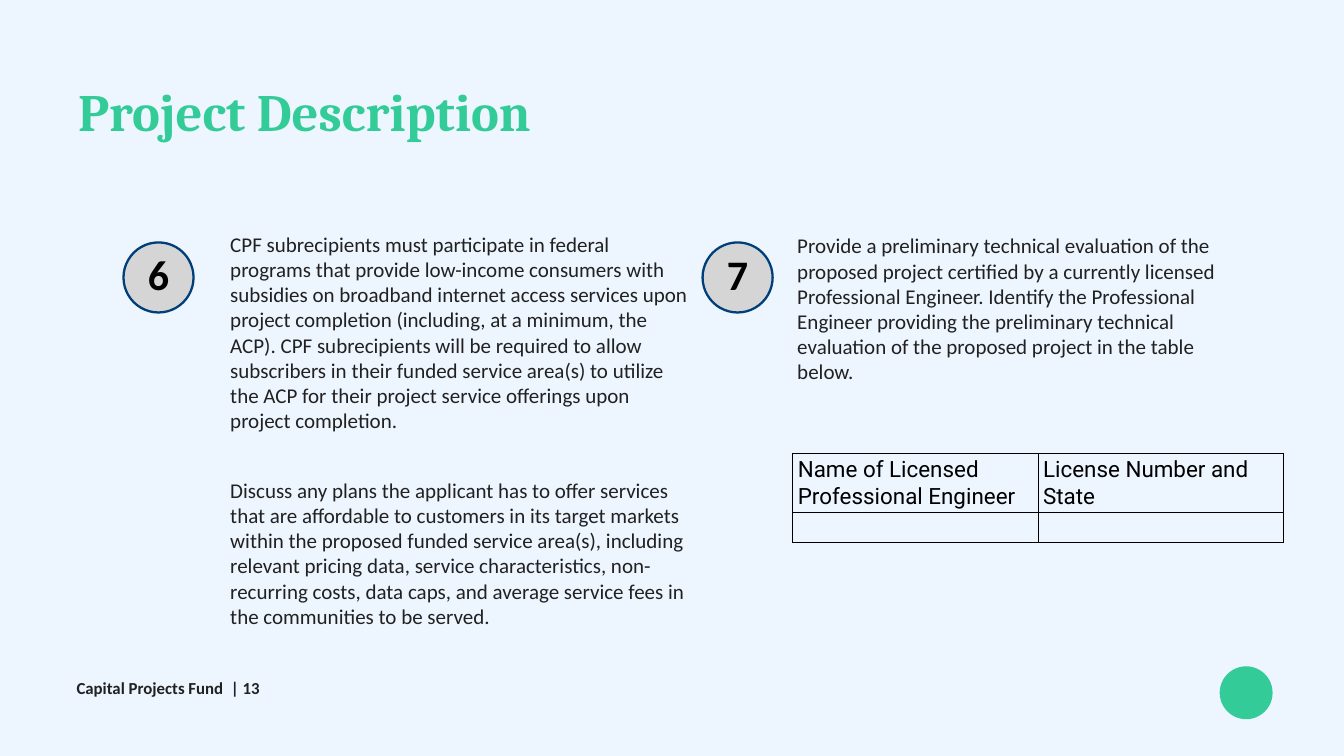
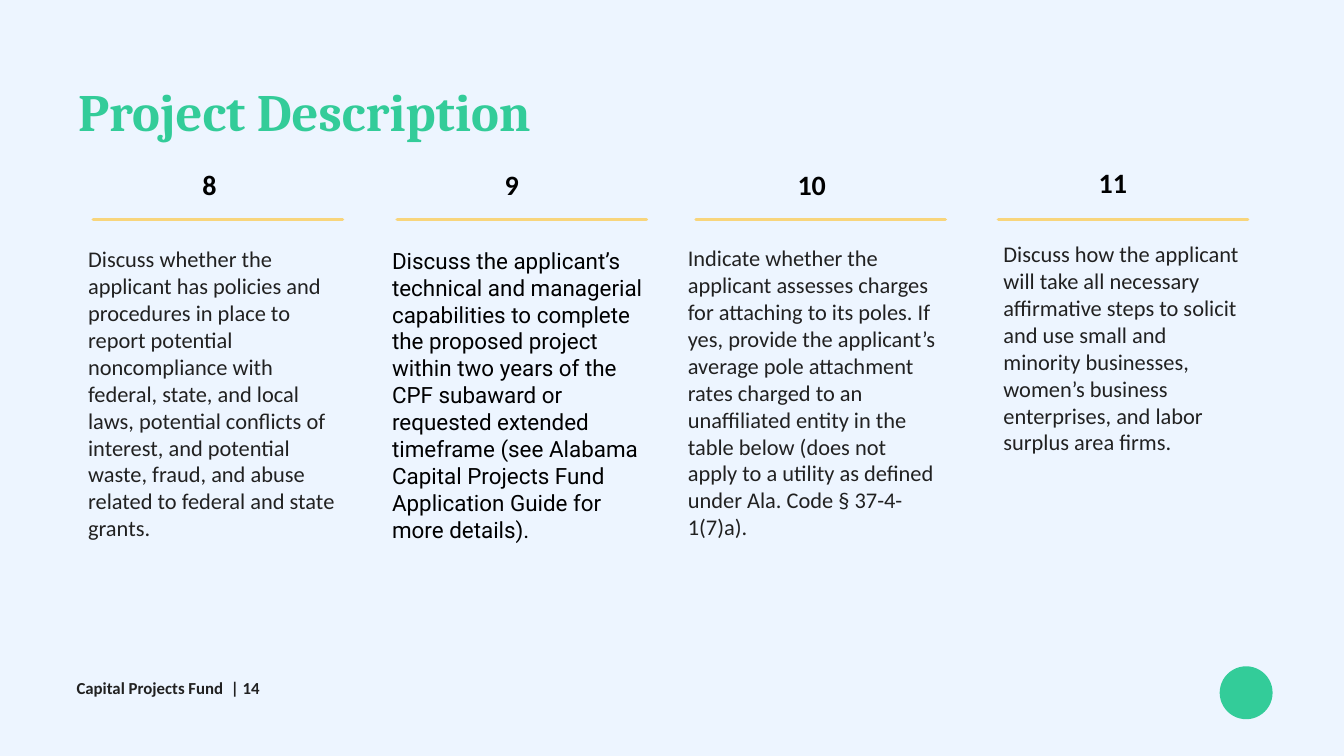
from dataclasses import dataclass

from lxml import etree
from pptx import Presentation
from pptx import util as u
from pptx.dml.color import RGBColor
from pptx.enum import shapes, text
from pptx.oxml import ns


@dataclass(frozen=True)
class Theme:
    """Colours, fonts, type sizes and the 80 by 45 cell grid."""
    background: str = "EDF5FF"
    green: str = "33CC99"
    grey: str = "D5D5D5"
    navy: str = "003E7A"
    yellow: str = "F8D57C"
    ink: str = "212121"
    black: str = "000000"
    title_font: str = "Cambria"
    body_font: str = "Calibri"
    alternate_font: str = "Roboto"
    title_size: int = 75
    badge_size: int = 60
    heading_size: int = 40
    column_size: int = 32
    body_size: int = 30
    footer_size: int = 24
    leading: float = 1.2
    width: int = u.Inches(26.67)
    height: int = u.Inches(15)
    columns: int = 80
    rows: int = 45


THEME = Theme()


def across(columns):
    """Turn grid columns into a length."""
    return round(THEME.width * columns / THEME.columns)


def down(rows):
    """Turn grid rows into a length."""
    return round(THEME.height * rows / THEME.rows)


def place(left, top, width, height):
    """Turn a box in grid cells into lengths."""
    return across(left), down(top), across(width), down(height)


def color(value):
    """Turn a hex string into a colour."""
    return RGBColor.from_string(value)


def write(frame, words, size=THEME.body_size, font=THEME.body_font, ink=THEME.ink,
          bold=False, spacing=None, align=None, anchor=None, inset=None):
    """Fill a text frame with one formatted paragraph."""
    frame.word_wrap = True
    if anchor is not None:
        frame.vertical_anchor = anchor
    if inset is not None:
        frame.margin_left = frame.margin_right = u.Inches(inset)
        frame.margin_top = frame.margin_bottom = u.Inches(inset)
    paragraph = frame.paragraphs[0]
    paragraph.alignment = align
    paragraph.line_spacing = spacing or u.Pt(size * THEME.leading)
    run = paragraph.add_run()
    run.text = words
    run.font.size = u.Pt(size)
    run.font.name = font
    run.font.bold = bold
    run.font.color.rgb = color(ink)


def add_text(slide, box, words, **style):
    """Add a text box at a grid position."""
    shape = slide.shapes.add_textbox(*place(*box))
    write(shape.text_frame, words, **style)


def add_circle(slide, left, top, size, fill, outline=None):
    """Add a filled circle with an optional outline."""
    shape = slide.shapes.add_shape(shapes.MSO_SHAPE.OVAL, *place(left, top, size, size))
    shape.shadow.inherit = False
    shape.fill.solid()
    shape.fill.fore_color.rgb = color(fill)
    if outline:
        shape.line.color.rgb = color(outline)
        shape.line.width = u.Pt(3.25)
    else:
        shape.line.fill.background()
    return shape


def add_badge(slide, left, number):
    """Add a numbered circle."""
    badge = add_circle(slide, left, 14.43, 4.17, THEME.grey, THEME.navy)
    write(badge.text_frame, number, size=THEME.badge_size, ink=THEME.black, bold=True,
          spacing=0.85, align=text.PP_ALIGN.CENTER,
          anchor=text.MSO_ANCHOR.MIDDLE, inset=0.05)


def add_rule(slide, left, top, width):
    """Add a yellow rule with round ends."""
    rule = slide.shapes.add_connector(
        shapes.MSO_CONNECTOR.STRAIGHT, across(left), down(top), across(left + width), down(top))
    rule.line.color.rgb = color(THEME.yellow)
    rule.line.width = u.Pt(5)
    rule.line._get_or_add_ln().set("cap", "rnd")
    etree.SubElement(rule._element.spPr, ns.qn("a:effectLst"))


def add_borders(cell):
    """Draw thin black lines around a table cell."""
    properties = cell._tc.get_or_add_tcPr()
    for side in ("lnL", "lnR", "lnT", "lnB"):
        line = etree.SubElement(properties, ns.qn(f"a:{side}"), w=str(u.Pt(1)))
        fill = etree.SubElement(line, ns.qn("a:solidFill"))
        etree.SubElement(fill, ns.qn("a:srgbClr"), val=THEME.black)


def add_license_table(slide, left, top, width, row_heights, headings):
    """Add a table of headings over an empty row."""
    box = place(left, top, width, sum(row_heights))
    table = slide.shapes.add_table(len(row_heights), len(headings), *box).table
    table.first_row = table.horz_banding = False
    for row, height in zip(table.rows, row_heights):
        row.height = down(height)
    for cell in table.iter_cells():
        add_borders(cell)
        cell.fill.background()
    for cell, heading in zip(table.rows[0].cells, headings):
        write(cell.text_frame, heading, size=THEME.column_size,
              font=THEME.alternate_font, ink=THEME.black)


def add_page(presentation, title, number):
    """Add a blank slide with the shared title, footer and dot."""
    slide = presentation.slides.add_slide(presentation.slide_layouts[6])
    add_circle(slide, 72.6, 39.66, 3.15, THEME.green)
    add_text(slide, (4.35, 5.01, 71.28, 3.72), title, size=THEME.title_size,
             font=THEME.title_font, ink=THEME.green, bold=True, spacing=0.9)
    add_text(slide, (4.26, 40.35, 57.54, 1.44), f"Capital Projects Fund  | {number}",
             size=THEME.footer_size, bold=True, spacing=0.9)
    return slide


def add_question(slide, number, words, rule_left, heading_box, body_box, **style):
    """Add a numbered column with its rule and text."""
    add_rule(slide, rule_left, 13.08, 14.84)
    add_text(slide, (*heading_box, 2.37), number, size=THEME.heading_size, ink=THEME.black,
             bold=True, spacing=1.0, align=text.PP_ALIGN.CENTER,
             anchor=text.MSO_ANCHOR.MIDDLE, inset=0.06)
    add_text(slide, (*body_box, 23.43), words, size=THEME.column_size, **style)


def build_engineer_slide(presentation):
    """Build the slide with questions 6 and 7."""
    slide = add_page(presentation, "Project Description", 13)
    add_badge(slide, 7.35, "6")
    add_badge(slide, 41.82, "7")
    add_text(slide, (13.41, 13.62, 27.81, 13.98),
             "CPF subrecipients must participate in federal programs that provide low-income "
             "consumers with subsidies on broadband internet access services upon project "
             "completion (including, at a minimum, the ACP). CPF subrecipients will be required "
             "to allow subscribers in their funded service area(s) to utilize the ACP for their "
             "project service offerings upon project completion.")
    add_text(slide, (13.41, 28.26, 27.81, 4.44),
             "Discuss any plans the applicant has to offer services that are affordable to "
             "customers in its target markets within the proposed funded service area(s), "
             "including relevant pricing data, service characteristics, non-recurring costs, "
             "data caps, and average service fees in the communities to be served.")
    add_text(slide, (47.16, 13.71, 27.81, 9.54),
             "Provide a preliminary technical evaluation of the proposed project certified by a "
             "currently licensed Professional Engineer. Identify the Professional Engineer "
             "providing the preliminary technical evaluation of the proposed project in the "
             "table below.")
    add_license_table(slide, 47.19, 27, 29.2, (3.48, 1.8),
                      ("Name of Licensed Professional Engineer", "License Number and State"))


def build_questions_slide(presentation):
    """Build the slide with questions 8 to 11."""
    slide = add_page(presentation, "Project Description", 14)
    add_question(
        slide, "8",
        "Discuss whether the applicant has policies and procedures in place to report potential "
        "noncompliance with federal, state, and local laws, potential conflicts of interest, and "
        "potential waste, fraud, and abuse related to federal and state grants.",
        5.55, (5.04, 9.81, 14.85), (4.95, 14.46, 15.66))
    add_question(
        slide, "9",
        "Discuss the applicant’s technical and managerial capabilities to complete the proposed "
        "project within two years of the CPF subaward or requested extended timeframe (see "
        "Alabama Capital Projects Fund Application Guide for more details).",
        23.64, (23.04, 9.78, 14.85), (23.04, 14.55, 16.44),
        font=THEME.alternate_font, ink=THEME.black)
    add_question(
        slide, "10",
        "Indicate whether the applicant assesses charges for attaching to its poles. If yes, "
        "provide the applicant’s average pole attachment rates charged to an unaffiliated entity "
        "in the table below (does not apply to a utility as defined under Ala. Code § "
        "37-4-1(7)a).",
        41.43, (40.89, 9.78, 14.85), (40.65, 14.4, 15.66))
    add_question(
        slide, "11",
        "Discuss how the applicant will take all necessary affirmative steps to solicit and use "
        "small and minority businesses, women’s business enterprises, and labor surplus area "
        "firms.",
        59.43, (56.16, 9.66, 20.16), (59.43, 14.16, 14.85))


def main():
    """Build and save the presentation."""
    presentation = Presentation()
    presentation.slide_width = THEME.width
    presentation.slide_height = THEME.height
    background = presentation.slide_master.background.fill
    background.solid()
    background.fore_color.rgb = color(THEME.background)
    build_engineer_slide(presentation)
    build_questions_slide(presentation)
    presentation.save("out.pptx")


if __name__ == "__main__":
    main()
